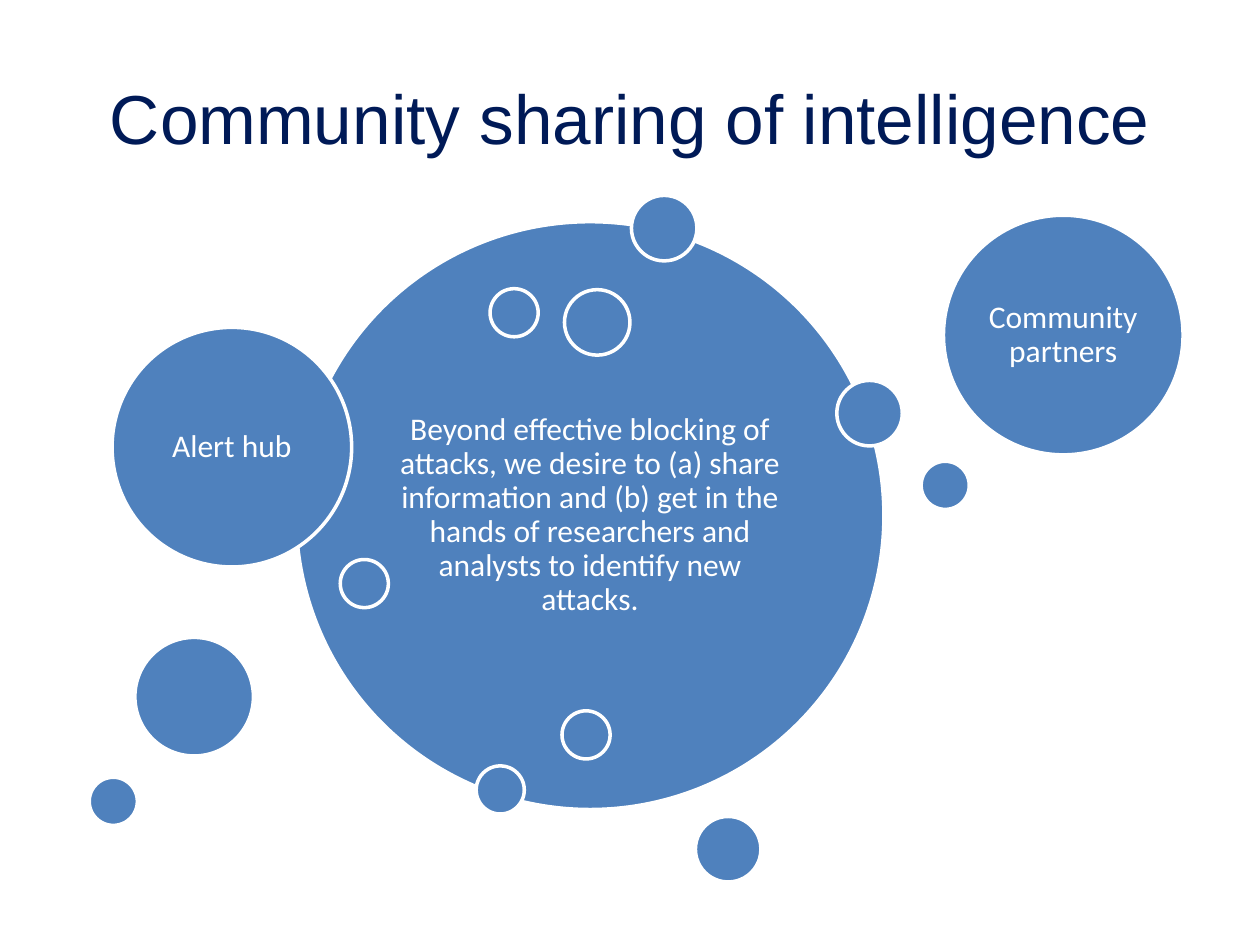
from pptx import Presentation
from pptx import util as u
from pptx.dml.color import RGBColor
from pptx.enum import shapes, text

BLUE, NAVY, WHITE = "4F81BD", "001A57", "FFFFFF"
TINY, SMALL, MEDIUM, LARGE, HUGE = 0.97, 1.32, 2.39, 4.83, 11.85
MESSAGE = (
    "Beyond effective blocking of attacks, we desire to (a) share information "
    "and (b) get in the hands of researchers and analysts to identify new attacks."
)
BUBBLES = [
    (5.97, 4.47, HUGE, MESSAGE),
    (12.73, 3.94, SMALL, ""),
    (9.6, 15.44, TINY, ""),
    (18.57, 9.3, TINY, ""),
    (14.02, 16.46, SMALL, ""),
    (9.88, 5.82, TINY, ""),
    (6.86, 11.28, TINY, ""),
    (2.26, 6.6, LARGE, "Alert hub"),
    (11.38, 5.84, SMALL, ""),
    (2.72, 12.85, MEDIUM, ""),
    (19.02, 4.34, LARGE, "Community partners"),
    (16.87, 7.67, SMALL, ""),
    (1.8, 15.67, TINY, ""),
    (11.33, 14.33, TINY, ""),
]


def color(value):
    return RGBColor.from_string(value)


def set_text(shape, words, size, font_name, font_color):
    frame = shape.text_frame
    frame.text = words
    frame.word_wrap = True
    frame.vertical_anchor = text.MSO_ANCHOR.MIDDLE
    paragraph = frame.paragraphs[0]
    paragraph.alignment = text.PP_ALIGN.CENTER
    font = paragraph.runs[0].font
    font.size = u.Pt(size)
    font.name = font_name
    font.color.rgb = color(font_color)


def add_title(slide, words):
    box = slide.shapes.add_textbox(u.Cm(1.27), u.Cm(0.76), u.Cm(22.86), u.Cm(3.18))
    set_text(box, words, 39.6, "Arial", NAVY)


def add_bubble(slide, left, top, diameter, words):
    bubble = slide.shapes.add_shape(
        shapes.MSO_SHAPE.OVAL, u.Cm(left), u.Cm(top), u.Cm(diameter), u.Cm(diameter)
    )
    bubble.shadow.inherit = False
    bubble.fill.solid()
    bubble.fill.fore_color.rgb = color(BLUE)
    bubble.line.color.rgb = color(WHITE)
    bubble.line.width = u.Pt(2)
    if words:
        set_text(bubble, words, 18, "Calibri", WHITE)
        frame = bubble.text_frame
        frame.margin_left = frame.margin_right = u.Cm(0.18)
        frame.margin_top = frame.margin_bottom = u.Cm(0.18)
        frame.paragraphs[0].line_spacing = 0.9


def main():
    presentation = Presentation()
    presentation.slide_width = u.Cm(25.4)
    presentation.slide_height = u.Cm(19.05)
    slide = presentation.slides.add_slide(presentation.slide_layouts[6])
    add_title(slide, "Community sharing of intelligence")
    for bubble in BUBBLES:
        add_bubble(slide, *bubble)
    presentation.save("out.pptx")


if __name__ == "__main__":
    main()
